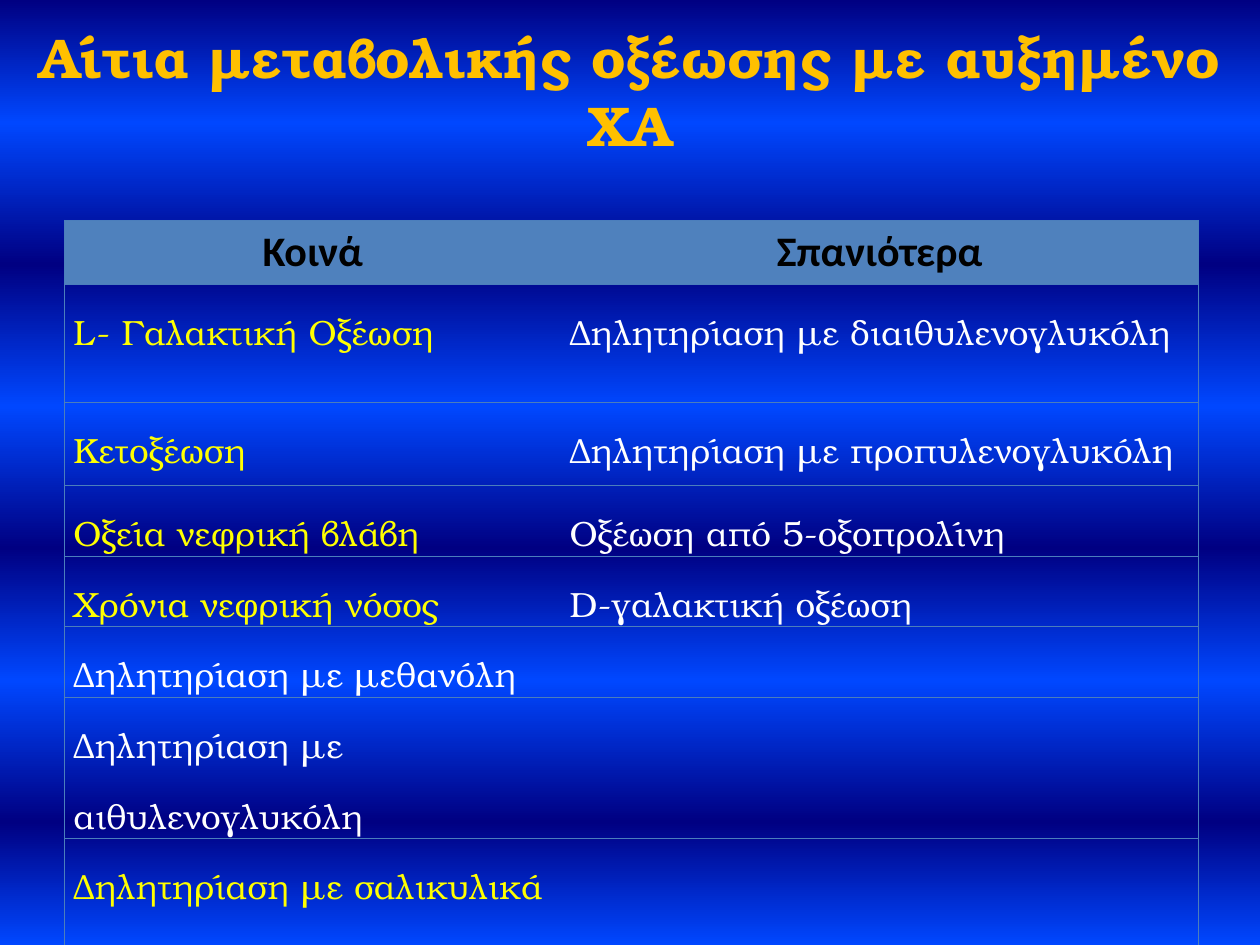
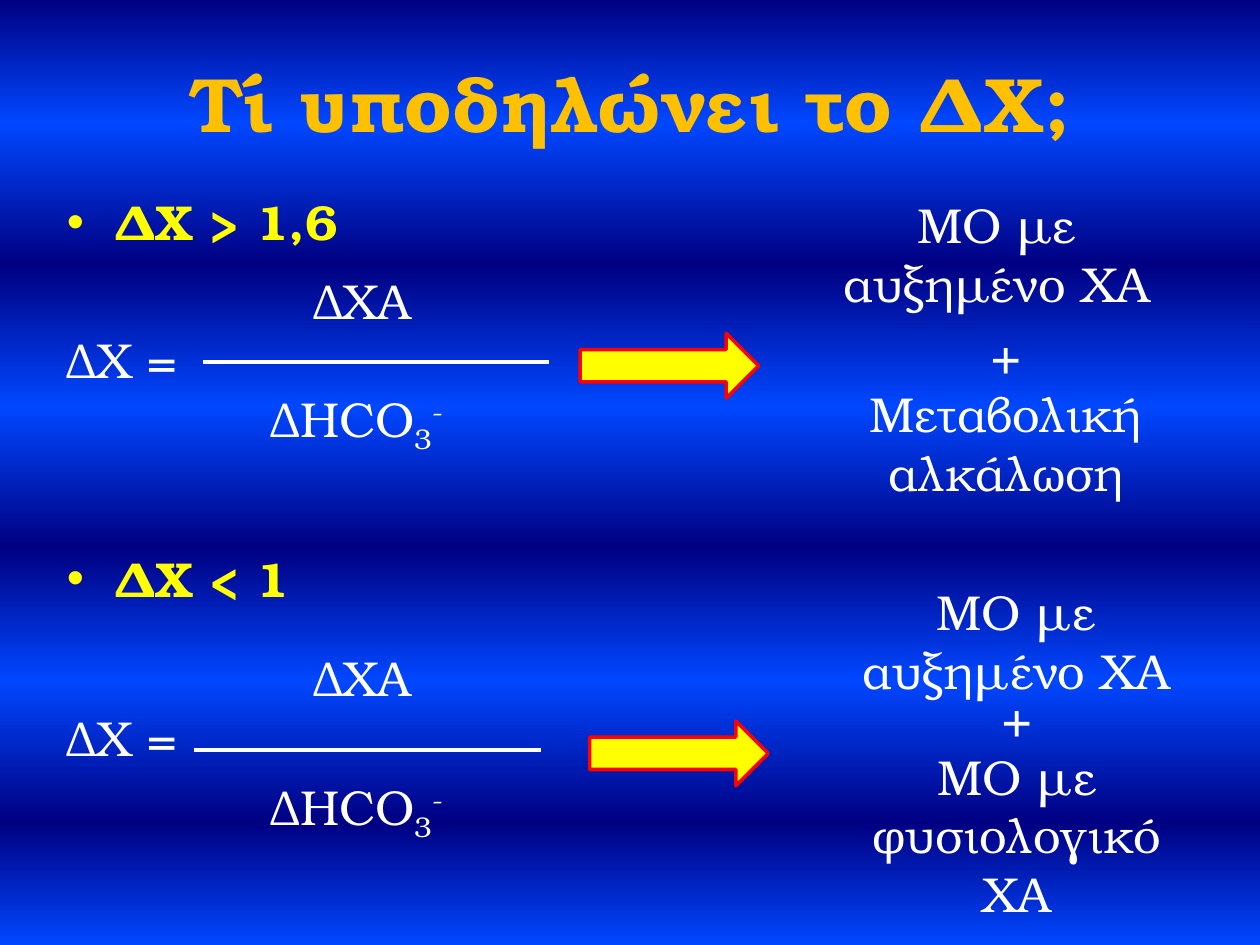
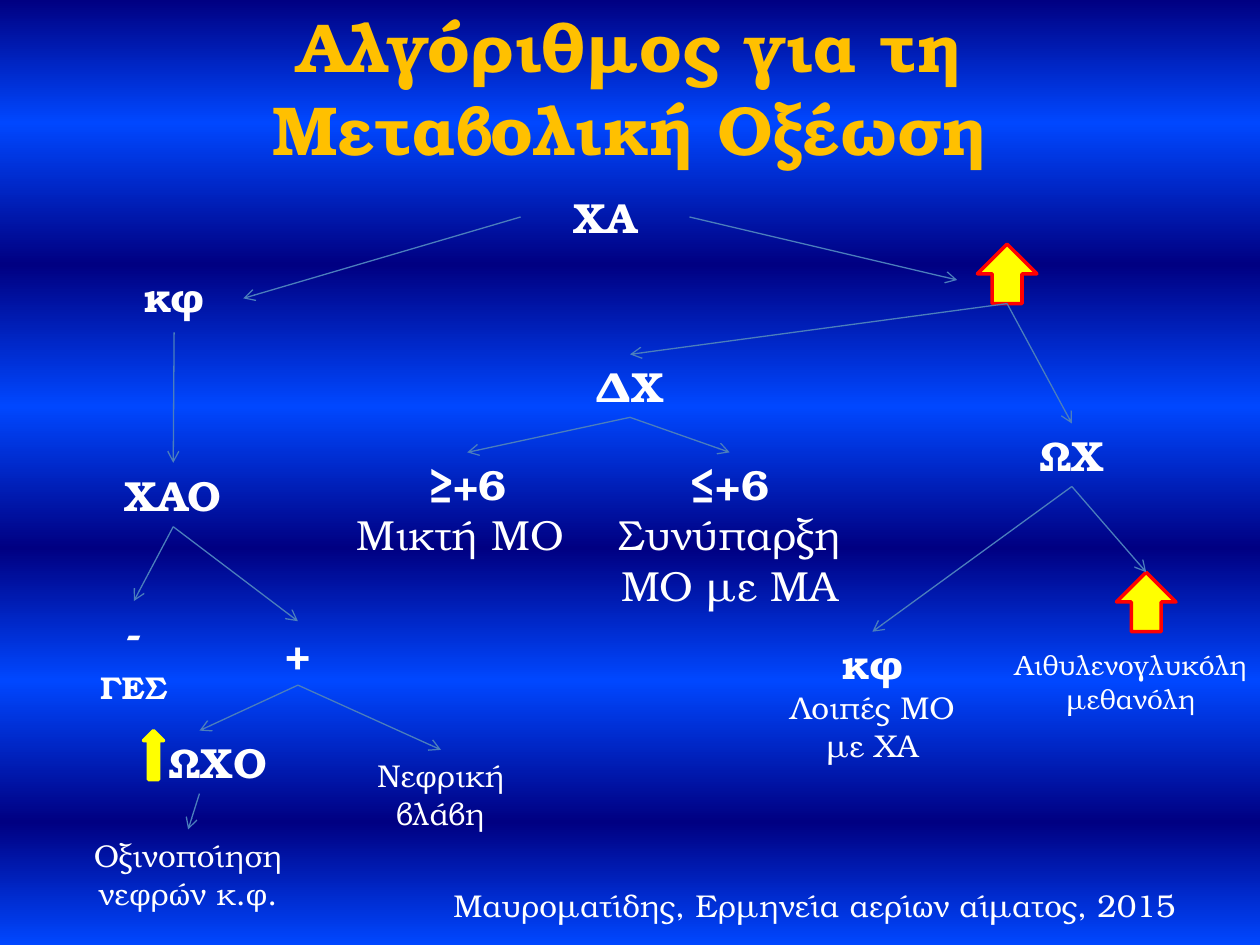
from copy import deepcopy

from lxml import etree
from pptx import Presentation
from pptx import util as u
from pptx.dml.color import RGBColor
from pptx.enum import shapes as sh
from pptx.enum import text as tx
from pptx.oxml import ns

Pt = u.Pt
SERIF, SANS = "TeX Gyre Bonum", "Calibri"
NAVY, BLUE, GOLD, YELLOW = "000082", "0047FF", "FFC000", "FFFF00"
WHITE, BLACK, RED, STEEL, HEADER = "FFFFFF", "000000", "FF0000", "4B7EBC", "4F81BD"
BAND_STOPS = (0, 13, 28, 43, 58, 72, 87, 100)
PLAIN_TABLE = "{2D5ABB26-0587-4C30-8999-92F81FD0307C}"
CENTER, RIGHT, LEFT = tx.PP_ALIGN.CENTER, tx.PP_ALIGN.RIGHT, tx.PP_ALIGN.LEFT
TOP, MIDDLE = tx.MSO_ANCHOR.TOP, tx.MSO_ANCHOR.MIDDLE
TOP_SITE, LEFT_SITE, BOTTOM_SITE, RIGHT_SITE = range(4)


def rgb(code):
    return RGBColor.from_string(code)


def apply(target, values):
    for name, value in values.items():
        setattr(target, name, value)


def points(box):
    return [Pt(length) for length in box]


def place(shape, box):
    apply(shape, dict(zip(("left", "top", "width", "height"), points(box))))


def add_run(paragraph, wording, size, color=WHITE, bold=False, face=SERIF, baseline=0):
    run = paragraph.add_run()
    run.text = wording
    apply(run.font, {"name": face, "size": Pt(size), "bold": bold})
    run.font.color.rgb = rgb(color)
    if baseline:
        run._r.get_or_add_rPr().set("baseline", str(baseline * 1000))


def set_frame(frame, anchor=TOP):
    apply(frame, {"word_wrap": True, "auto_size": tx.MSO_AUTO_SIZE.NONE,
                  "vertical_anchor": anchor})


def add_label(slide, box, lines, align=CENTER, anchor=TOP):
    label = slide.shapes.add_textbox(*points(box))
    frame = label.text_frame
    set_frame(frame, anchor)
    for index, runs in enumerate(lines):
        paragraph = frame.add_paragraph() if index else frame.paragraphs[0]
        paragraph.alignment = align
        for run in runs:
            add_run(paragraph, **run)
    return label


def line_of(wording, size, bold=False):
    return [{"wording": wording, "size": size, "bold": bold}]


def add_block_arrow(slide, preset, box, outline=RED):
    arrow = slide.shapes.add_shape(preset, *points(box))
    arrow.shadow.inherit = False
    arrow.fill.solid()
    arrow.fill.fore_color.rgb = rgb(YELLOW)
    arrow.line.color.rgb = rgb(outline)
    arrow.line.width = Pt(2)
    return arrow


def add_rule(slide, start, end, color, width, arrow=False):
    rule = slide.shapes.add_connector(sh.MSO_CONNECTOR.STRAIGHT, *points(start + end))
    rule.line.color.rgb = rgb(color)
    rule.line.width = Pt(width)
    if arrow:
        etree.SubElement(rule.line._get_or_add_ln(), ns.qn("a:tailEnd"), type="arrow")
    etree.SubElement(rule._element.spPr, ns.qn("a:effectLst"))
    return rule


def paint_bands(master):
    fill = master.background.fill
    fill.gradient()
    fill.gradient_angle = 270
    stops = master.element.find(".//" + ns.qn("a:gsLst"))
    pattern = deepcopy(stops[0])
    for stop in list(stops):
        stops.remove(stop)
    for _ in BAND_STOPS:
        stops.append(deepcopy(pattern))
    for index, (stop, percent) in enumerate(zip(fill.gradient_stops, BAND_STOPS)):
        stop.color.rgb = rgb(BLUE if index % 2 else NAVY)
        stop.position = percent / 100


def add_titled_slide(prs, layout, heading, box, size):
    slide = prs.slides.add_slide(prs.slide_layouts[layout])
    title = slide.shapes.title
    place(title, box)
    set_frame(title.text_frame, MIDDLE)
    paragraph = title.text_frame.paragraphs[0]
    paragraph.alignment = CENTER
    add_run(paragraph, heading, size, GOLD, True)
    return slide


def set_borders(cell, sides):
    properties = cell._tc.get_or_add_tcPr()
    for side in sides:
        edge = etree.SubElement(properties, ns.qn("a:ln" + side), w=str(Pt(0.75)))
        solid = etree.SubElement(edge, ns.qn("a:solidFill"))
        etree.SubElement(solid, ns.qn("a:srgbClr"), val=STEEL)


def add_causes_table(slide, box, columns, heights, rows):
    frame = slide.shapes.add_table(len(rows), len(columns), *points(box))
    table = frame.table
    table._tbl.tblPr.find(ns.qn("a:tableStyleId")).text = PLAIN_TABLE
    for column, width in zip(table.columns, columns):
        column.width = Pt(width)
    for r, (row, height, causes) in enumerate(zip(table.rows, heights, rows)):
        row.height = Pt(height)
        for c, (cell, cause) in enumerate(zip(row.cells, causes)):
            set_borders(cell, ("RTB" if c else "LTB"))
            paragraph = cell.text_frame.paragraphs[0]
            if r == 0:
                cell.fill.solid()
                cell.fill.fore_color.rgb = rgb(HEADER)
                paragraph.alignment = CENTER
                add_run(paragraph, cause, 24, BLACK, True, SANS)
                continue
            cell.fill.background()
            apply(cell, {"margin_left": Pt(5), "margin_right": Pt(5),
                         "margin_top": 0, "margin_bottom": 0})
            if cause:
                paragraph.line_spacing = 1.5
                common = c == 0 and "θανόλη" not in cause and "γλυκόλη" not in cause
                add_run(paragraph, cause, 20, YELLOW if common else WHITE)


def add_criteria(slide, box, items):
    body = slide.placeholders[1]
    place(body, box)
    frame = body.text_frame
    set_frame(frame)
    for index, (wording, before, spacing) in enumerate(items):
        paragraph = frame.add_paragraph() if index else frame.paragraphs[0]
        apply(paragraph, {"space_before": Pt(before), "line_spacing": spacing})
        criterion = wording != "ΔΧ ="
        properties = paragraph._p.get_or_add_pPr()
        properties.set("marL", str(Pt(27)))
        properties.set("indent", str(Pt(-27)))
        if not criterion:
            etree.SubElement(properties, ns.qn("a:buNone"))
        add_run(paragraph, wording, 28, YELLOW if criterion else WHITE, criterion)


def add_ratio(slide, left, top, bar_drop):
    bar = top + bar_drop
    bicarbonate = [{"wording": "ΔHCO", "size": 28},
                   {"wording": "3", "size": 28, "baseline": -25},
                   {"wording": "-", "size": 28, "baseline": 30}]
    add_label(slide, (122, top, 170, 41), [line_of("ΔΧΑ", 28)])
    add_rule(slide, (left, bar), (left + 198, bar), WHITE, 2.25)
    add_label(slide, (116, bar + 11.5, 176, 41), [bicarbonate])


def add_meaning(slide, arrow_at, first_at, second_at, second_height, addition):
    add_block_arrow(slide, sh.MSO_SHAPE.RIGHT_ARROW, arrow_at + (102, 37))
    add_label(slide, second_at + (204, second_height),
              [line_of("+", 28), line_of(addition, 28)], anchor=MIDDLE)
    add_label(slide, first_at + (215, 45), [line_of("ΜΟ με αυξημένο ΧΑ", 28)],
              anchor=MIDDLE)


def add_algorithm(slide):
    labels = {
        "gap": ((297.5, 106, 96.5, 36), [line_of("XA", 24, True)]),
        "normal gap": ((60, 151, 79, 39), [line_of("κφ", 24, True)]),
        "urine gap": ((42.5, 264.5, 113, 36.5), [line_of("ΧΑΟ", 24, True)]),
        "negative": ((37, 343.5, 79, 36), [line_of("-", 24, True)]),
        "bowel": ((31, 378, 91, 29), [line_of("ΓΕΣ", 18, True)]),
        "positive": ((139, 355, 62.5, 36.5), [line_of("+", 24, True)]),
        "renal": ((206.5, 428.5, 91, 51), [line_of("Νεφρική βλάβη", 18)]),
        "acidification": ((42.5, 474, 130, 51), [line_of("Οξινοποίηση νεφρών κ.φ.", 18)]),
        "osmolal": ((553, 242, 119, 36), [line_of("ΩΧ", 24, True)]),
        "toxins": ((572.5, 366.5, 147.5, 46),
                   [line_of("Αιθυλενογλυκόλη", 16), line_of("μεθανόλη", 16)]),
        "other": ((439, 361, 119, 80),
                  [line_of("κφ", 24, True), line_of("Λοιπές ΜΟ με ΧΑ", 18)]),
        "delta": ((281, 202.5, 158, 36), [line_of("ΔΧ", 24, True)]),
        "mixed": ((196, 258.5, 142, 65.5),
                  [line_of("≥+6", 24, True), line_of("Μικτή ΜΟ ", 24)]),
        "coexisting": ((338, 258.5, 158, 94),
                       [line_of("≤+6", 24, True), line_of("Συνύπαρξη ΜΟ με ΜΑ", 24)]),
    }
    nodes = {key: add_label(slide, box, lines) for key, (box, lines) in labels.items()}
    nodes["urine osmolal"] = add_label(slide, (60, 417.5, 108, 36),
                                       [line_of("ΩΧΟ ", 24, True)], RIGHT)
    up = sh.MSO_SHAPE.UP_ARROW
    nodes["high gap"] = add_block_arrow(slide, up, (558.5, 139.5, 34, 34))
    nodes["high osmolal"] = add_block_arrow(slide, up, (638, 327, 34, 34))
    add_block_arrow(slide, up, (82, 417.5, 11.5, 28), YELLOW)

    branches = {
        "normal gap": ["urine gap"],
        "urine gap": ["negative", "positive"],
        "positive": ["urine osmolal", "renal"],
        "urine osmolal": ["acidification"],
        "high gap": ["delta", "osmolal"],
        "delta": ["mixed", "coexisting"],
        "osmolal": ["other", "high osmolal"],
    }
    links = [(parent, BOTTOM_SITE, child, TOP_SITE)
             for parent, children in branches.items() for child in children]
    links.append(("gap", LEFT_SITE, "normal gap", RIGHT_SITE))
    for parent, start, child, end in links:
        branch = add_rule(slide, (0, 0), (1, 1), STEEL, 0.75, True)
        branch.begin_connect(nodes[parent], start)
        branch.end_connect(nodes[child], end)
    add_rule(slide, (394, 124), (547, 160), STEEL, 0.75, True)


def causes_slide(prs):
    slide = add_titled_slide(prs, 5, "Αίτια μεταβολικής οξέωσης με αυξημένο ΧΑ",
                             (0, 15, 720, 73), 32)
    rows = [
        ("Κοινά", "Σπανιότερα"),
        ("L- Γαλακτική Οξέωση", "Δηλητηρίαση με διαιθυλενογλυκόλη"),
        ("Κετοξέωση", "Δηλητηρίαση με προπυλενογλυκόλη"),
        ("Οξεία νεφρική βλάβη", "Οξέωση από 5-οξοπρολίνη"),
        ("Χρόνια νεφρική νόσος", "D-γαλακτική οξέωση"),
        ("Δηλητηρίαση με μεθανόλη", ""),
        ("Δηλητηρίαση με αιθυλενογλυκόλη", ""),
        ("Δηλητηρίαση με σαλικυλικά", ""),
    ]
    add_causes_table(slide, (37, 126, 648, 399), (283.5, 364.5),
                     (34, 67.5, 47.5, 34, 34, 34, 67.5, 67.5), rows)


def delta_slide(prs):
    slide = add_titled_slide(prs, 1, "Τί υποδηλώνει το ΔΧ;", (36, 21.5, 648, 73), 44)
    add_criteria(slide, (31, 106, 659, 414),
                 [("ΔΧ > 1,6", 0, 1.0), ("ΔΧ =", 44.8, 1.0),
                  ("ΔΧ < 1", 85, 1.2), ("ΔΧ =", 50.6, 1.2)])
    add_ratio(slide, 116, 151, 56)
    add_meaning(slide, (331.5, 190.5), (462, 122.5), (473, 185), 102,
                "Μεταβολική αλκάλωση")
    add_ratio(slide, 111, 366.5, 62)
    add_meaning(slide, (337, 412), (473, 343.5), (479, 406), 108,
                "ΜΟ με φυσιολογικό ΧΑ")


def algorithm_slide(prs):
    slide = add_titled_slide(prs, 5, "Αλγόριθμος για τη Μεταβολική Οξέωση",
                             (36, 21.5, 648, 55.5), 39.6)
    add_algorithm(slide)
    add_label(slide, (252, 502.5, 468, 29),
              [line_of("Μαυροματίδης, Ερμηνεία αερίων αίματος, 2015", 18)], LEFT)


def main():
    prs = Presentation()
    apply(prs, {"slide_width": Pt(720), "slide_height": Pt(540)})
    paint_bands(prs.slide_master)
    causes_slide(prs)
    delta_slide(prs)
    algorithm_slide(prs)
    prs.save("out.pptx")


if __name__ == "__main__":
    main()
